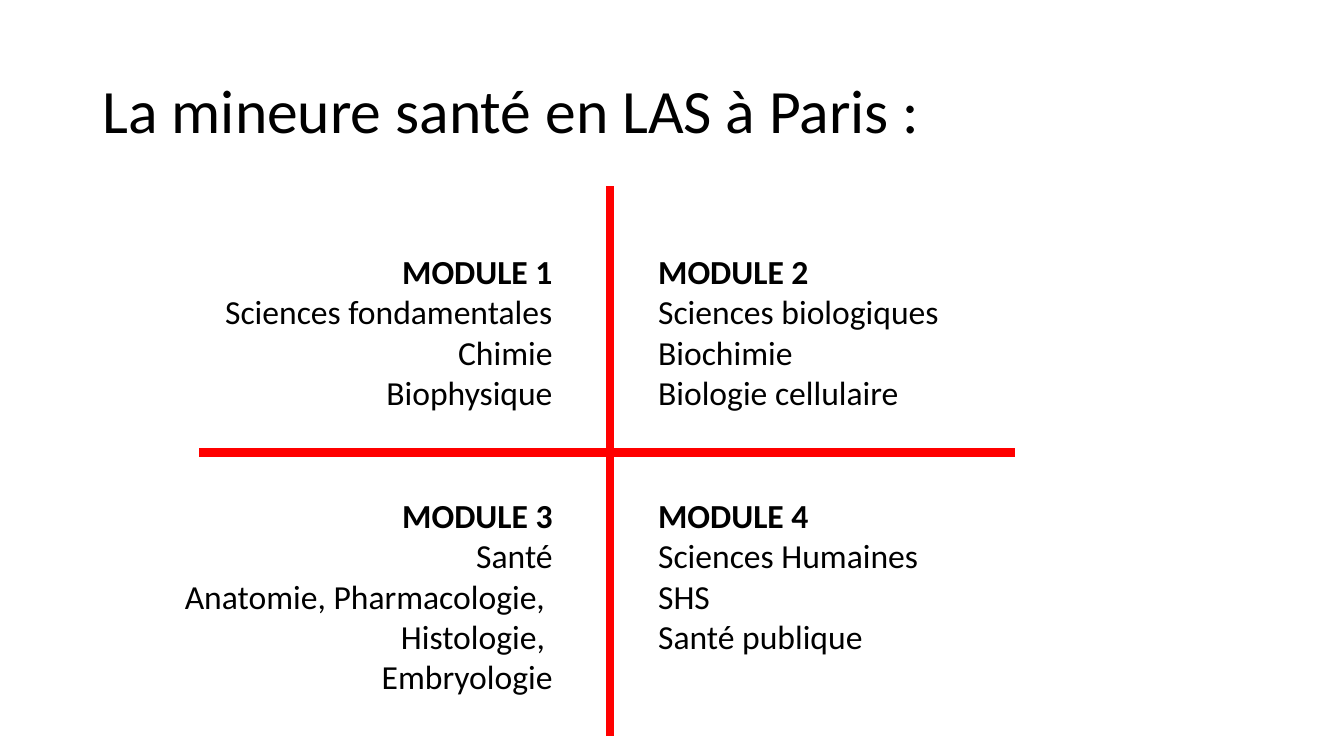
from lxml import etree
from pptx import Presentation
from pptx.dml.color import RGBColor
from pptx.enum import shapes, text
from pptx.util import Pt

FONT = "Calibri"
BLACK, RED = "000000", "FF0000"
LEFT_COLUMN_END, RIGHT_COLUMN_START = 401.8, 463
TOP_ROW, BOTTOM_ROW = 175.7, 349.9
LINE_HEIGHT, INSETS = 29.2, 7.2


def paint(color_format, color):
    color_format.rgb = RGBColor.from_string(color)


def style_runs(paragraph, size, bold=False):
    for run in paragraph.runs:
        run.font.name = FONT
        run.font.size = Pt(size)
        run.font.bold = bold
        paint(run.font.color, BLACK)


presentation = Presentation()
presentation.slide_width, presentation.slide_height = Pt(960), Pt(540)
slide = presentation.slides.add_slide(presentation.slide_layouts[5])

# Title
title = slide.shapes.title
title.left, title.top, title.width, title.height = Pt(66), Pt(28.8), Pt(828), Pt(104.4)
title.text_frame.text = "La mineure santé en LAS à Paris :"
title.text_frame.auto_size = text.MSO_AUTO_SIZE.NONE
title.text_frame.vertical_anchor = text.MSO_ANCHOR.MIDDLE
heading = title.text_frame.paragraphs[0]
heading.alignment = text.PP_ALIGN.LEFT
heading.line_spacing = 0.9
style_runs(heading, 44)

# Modules: the left column ends, and the right column starts, beside the vertical line
modules = [
    (LEFT_COLUMN_END - 480.2, TOP_ROW, 480.2, text.PP_ALIGN.RIGHT,
     ["MODULE 1", "Sciences fondamentales", "Chimie", "Biophysique"]),
    (RIGHT_COLUMN_START, TOP_ROW, 519.1, text.PP_ALIGN.LEFT,
     ["MODULE 2", "Sciences biologiques", "Biochimie", "Biologie cellulaire"]),
    (RIGHT_COLUMN_START, BOTTOM_ROW, 530.6, text.PP_ALIGN.LEFT,
     ["MODULE 4", "Sciences Humaines", "SHS", "Santé publique"]),
    (LEFT_COLUMN_END - 536.4, BOTTOM_ROW, 536.4, text.PP_ALIGN.RIGHT,
     ["MODULE 3", "Santé", "Anatomie, Pharmacologie, ", "Histologie, ", "Embryologie"]),
]
for left, top, width, alignment, lines in modules:
    height = len(lines) * LINE_HEIGHT + INSETS
    box = slide.shapes.add_textbox(Pt(left), Pt(top), Pt(width), Pt(height))
    frame = box.text_frame
    frame.word_wrap = True
    frame.auto_size = text.MSO_AUTO_SIZE.SHAPE_TO_FIT_TEXT
    frame.text = "\n".join(lines)
    for index, paragraph in enumerate(frame.paragraphs):
        paragraph.alignment = alignment
        style_runs(paragraph, 24, bold=index == 0)

# Red cross between the modules
cross = [(435.6, 133.2, 435.6, 525.6), (725, 323.3, 141.8, 323.3)]
for start_x, start_y, end_x, end_y in cross:
    line = slide.shapes.add_connector(
        shapes.MSO_CONNECTOR.STRAIGHT, Pt(start_x), Pt(start_y), Pt(end_x), Pt(end_y))
    line.line.width = Pt(6)
    paint(line.line.color, RED)
    etree.SubElement(
        line._element.spPr, "{http://schemas.openxmlformats.org/drawingml/2006/main}effectLst")

presentation.save("out.pptx")
